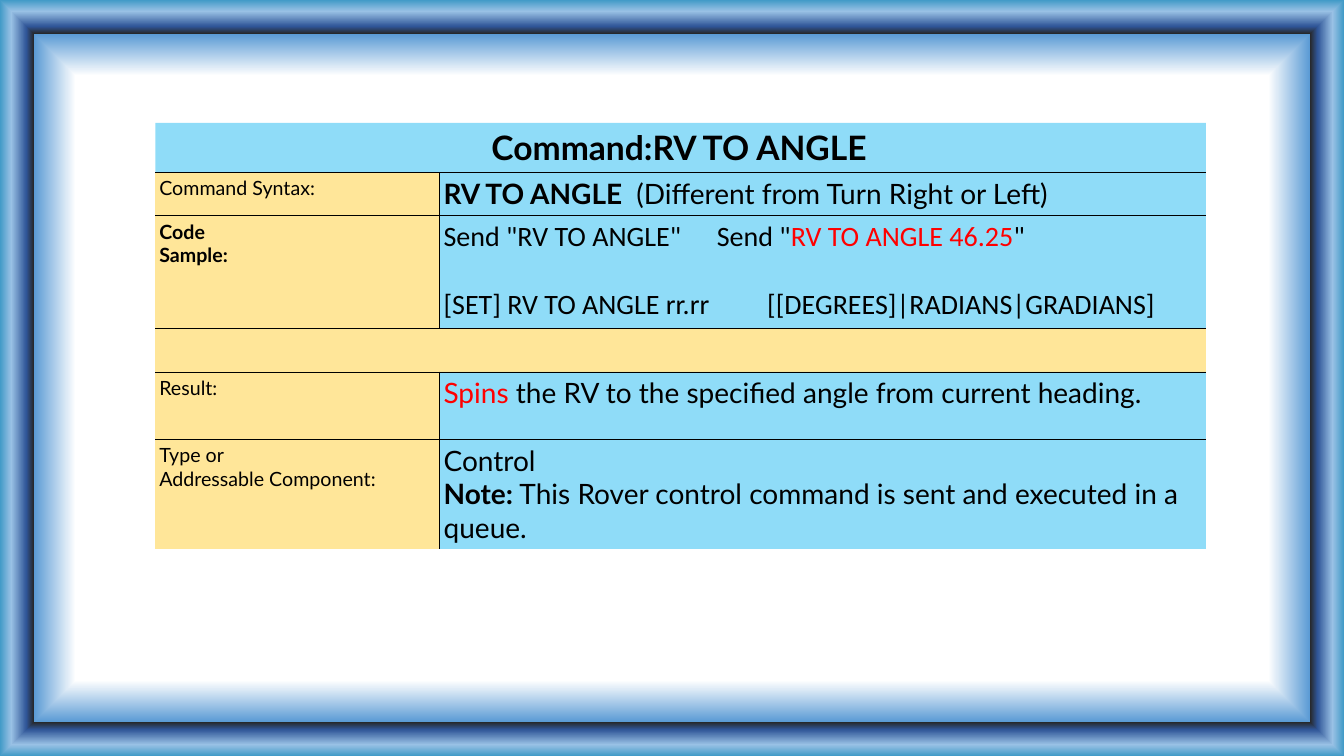
from dataclasses import dataclass

from pptx import Presentation
from pptx.dml.color import RGBColor
from pptx.enum.text import PP_ALIGN as Align
from pptx.oxml import parse_xml
from pptx.oxml.ns import nsdecls
from pptx.slide import Slide
from pptx.table import Table, _Cell as Cell
from pptx.util import Inches, Pt

BLACK = RGBColor(0x00, 0x00, 0x00)
RED = RGBColor(0xFF, 0x00, 0x00)
SKY = RGBColor(0x00, 0xB0, 0xF0)
CREAM = RGBColor(0xFF, 0xE6, 0x99)

FRAME_STOPS = (
    (80, RGBColor(0xFF, 0xFF, 0xFF)),
    (91, RGBColor(0x5B, 0x9B, 0xD5)),
    (91, RGBColor(0x26, 0x26, 0x26)),
    (93, RGBColor(0x2F, 0x55, 0x97)),
    (97, RGBColor(0x99, 0xC1, 0xE5)),
    (100, RGBColor(0x41, 0x9A, 0xC7)),
)
SKY_OPACITY = 44
BORDER_WIDTH = Pt(0.38)
COLUMN_WIDTHS = (2.82, 7.6)
CELL_FORMAT = {
    "margin_left": Inches(0.04),
    "margin_top": Inches(0.04),
    "margin_right": Inches(0.07),
    "margin_bottom": Inches(0.04),
}


@dataclass(frozen=True)
class Piece:
    text: str
    bold: bool = False
    color: RGBColor = BLACK


@dataclass(frozen=True)
class Line:
    pieces: tuple[Piece, ...]
    size: float = 20
    font: str = "Lato"
    align: Align = Align.LEFT
    space_before: float = 0
    tab: float = 0


@dataclass(frozen=True)
class Row:
    height: float
    label: tuple[Line, ...] = ()
    value: tuple[Line, ...] = ()
    merged: bool = False
    label_fill: RGBColor = CREAM


def label(text: str, bold: bool = False) -> tuple[Line, ...]:
    return (Line((Piece(text, bold),), size=14),)


ROWS = (
    Row(
        0.49,
        (Line((Piece("Command:RV TO ANGLE", True),), size=24, align=Align.CENTER),),
        merged=True,
        label_fill=SKY,
    ),
    Row(
        0.43,
        label("Command Syntax:"),
        (Line((Piece("RV TO ANGLE ", True), Piece(" (Different from Turn Right or Left)"))),),
    ),
    Row(
        1.12,
        label("Code \nSample:", True),
        (
            Line(
                (
                    Piece('Send "RV TO ANGLE"\tSend "'),
                    Piece("RV TO ANGLE 46.25", color=RED),
                    Piece('"'),
                ),
                font="Calibri",
                tab=2.71,
            ),
            Line(
                (Piece("[SET] RV TO ANGLE rr.rr\t[[DEGREES]|RADIANS|GRADIANS]"),),
                font="Calibri",
                space_before=24.4,
                tab=3.21,
            ),
        ),
    ),
    Row(0.43, merged=True),
    Row(
        0.67,
        label("Result:"),
        (
            Line(
                (
                    Piece("Spins", color=RED),
                    Piece(" the RV to the specified angle from current heading."),
                )
            ),
        ),
    ),
    Row(
        1.08,
        label("Type or \nAddressable Component:"),
        (
            Line((Piece("Control"),)),
            Line(
                (
                    Piece("Note:", True),
                    Piece(" This Rover control command is sent and executed in a queue."),
                )
            ),
        ),
    ),
)


def paint_background(slide: Slide) -> None:
    stops = "".join(
        f'<a:gs pos="{position * 1000}"><a:srgbClr val="{color}"/></a:gs>'
        for position, color in FRAME_STOPS
    )
    background = parse_xml(
        f'<p:bg {nsdecls("p", "a")}><p:bgPr><a:gradFill><a:gsLst>{stops}</a:gsLst>'
        '<a:path path="rect"><a:fillToRect l="50000" t="50000" r="50000" b="50000"/></a:path>'
        "</a:gradFill><a:effectLst/></p:bgPr></p:bg>"
    )
    slide.element.cSld.insert(0, background)


def write_lines(cell: Cell, lines: tuple[Line, ...]) -> None:
    frame = cell.text_frame
    for index, line in enumerate(lines):
        paragraph = frame.add_paragraph() if index else frame.paragraphs[0]
        paragraph_format = {"alignment": line.align, "space_before": Pt(line.space_before)}
        for name, value in paragraph_format.items():
            setattr(paragraph, name, value)
        if line.tab:
            paragraph._p.get_or_add_pPr().append(
                parse_xml(
                    f'<a:tabLst {nsdecls("a")}><a:tab pos="{Inches(line.tab)}" algn="l"/></a:tabLst>'
                )
            )
        for piece in line.pieces:
            for part, text in enumerate(piece.text.split("\n")):
                if part:
                    paragraph.add_line_break()
                run = paragraph.add_run()
                run.text = text
                run.font.color.rgb = piece.color
                font_format = {"name": line.font, "size": Pt(line.size), "bold": piece.bold}
                for name, value in font_format.items():
                    setattr(run.font, name, value)


def style_cell(cell: Cell, fill: RGBColor, borders: dict[str, bool]) -> None:
    for name, value in CELL_FORMAT.items():
        setattr(cell, name, value)
    cell.fill.solid()
    cell.fill.fore_color.rgb = fill
    properties = cell._tc.get_or_add_tcPr()
    if fill == SKY:
        color = properties.find(".//{*}srgbClr")
        color.append(parse_xml(f'<a:alpha {nsdecls("a")} val="{SKY_OPACITY * 1000}"/>'))
    for index, (side, visible) in enumerate(borders.items()):
        paint = f'<a:solidFill><a:srgbClr val="{BLACK}"/></a:solidFill>' if visible else "<a:noFill/>"
        border = f'<a:ln{side} {nsdecls("a")} w="{BORDER_WIDTH}">{paint}</a:ln{side}>'
        properties.insert(index, parse_xml(border))


def fill_row(table: Table, index: int, row: Row) -> None:
    table.rows[index].height = Inches(row.height)
    cells = table.rows[index].cells
    if row.merged:
        cells[0].merge(cells[1])
    fills = (row.label_fill, row.label_fill if row.merged else SKY)
    for column, (cell, fill) in enumerate(zip(cells, fills)):
        borders = {
            "L": column == 1 and not row.merged,
            "R": column == 0 and not row.merged,
            "T": index > 0,
            "B": index < len(ROWS) - 1,
        }
        style_cell(cell, fill, borders)
        write_lines(cell, (row.label, row.value)[column])


def main() -> None:
    presentation = Presentation()
    presentation.slide_width, presentation.slide_height = Inches(13.33), Inches(7.5)
    slide = presentation.slides.add_slide(presentation.slide_layouts[6])
    paint_background(slide)
    width, height = sum(COLUMN_WIDTHS), sum(row.height for row in ROWS)
    table = slide.shapes.add_table(
        len(ROWS), len(COLUMN_WIDTHS), Inches(1.54), Inches(1.22), Inches(width), Inches(height)
    ).table
    table.first_row = table.horz_banding = False
    for column, column_width in zip(table.columns, COLUMN_WIDTHS):
        column.width = Inches(column_width)
    for index, row in enumerate(ROWS):
        fill_row(table, index, row)
    presentation.save("out.pptx")


if __name__ == "__main__":
    main()
